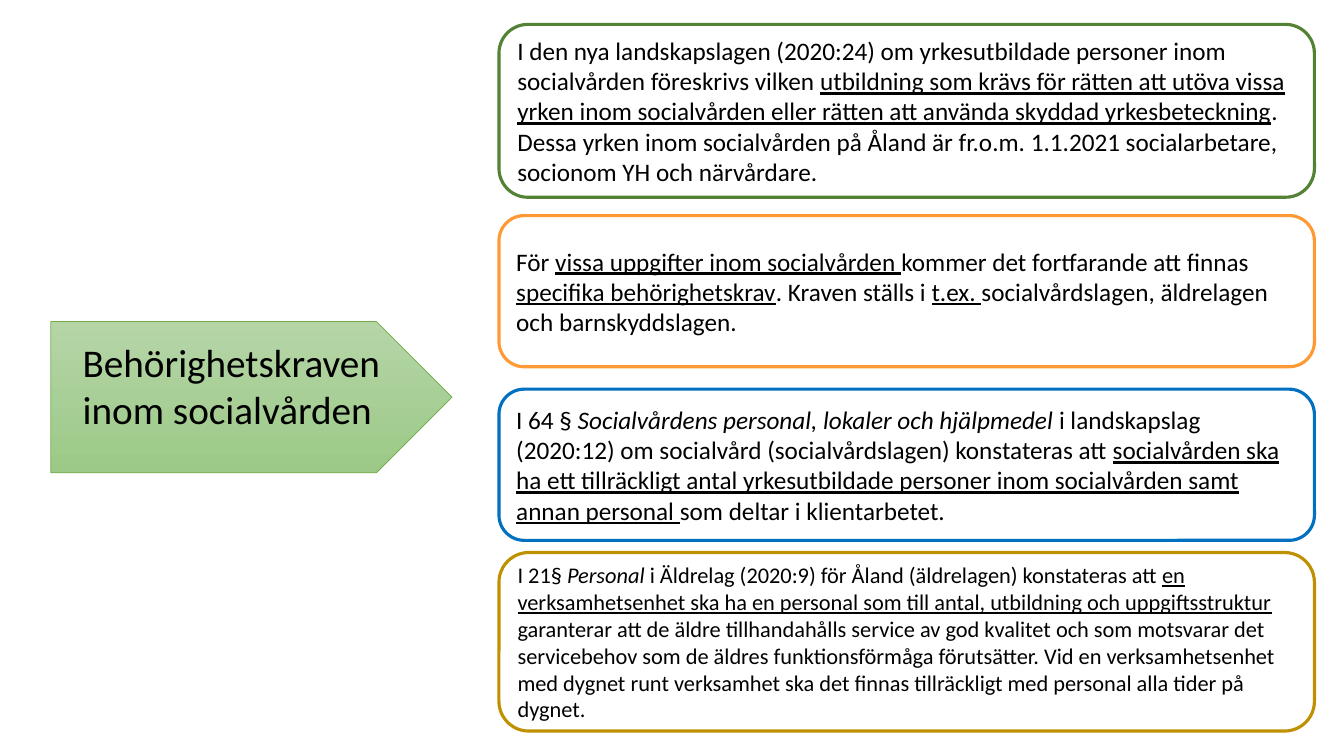
from pptx import Presentation
from pptx.dml.color import RGBColor
from pptx.enum.shapes import MSO_SHAPE
from pptx.enum.text import MSO_ANCHOR, MSO_AUTO_SIZE, PP_ALIGN
from pptx.util import Pt

BLACK = RGBColor(0x00, 0x00, 0x00)
WHITE = RGBColor(0xFF, 0xFF, 0xFF)
LIGHT_GREEN = RGBColor(0xB5, 0xD5, 0xA7)
MID_GREEN = RGBColor(0x9C, 0xC9, 0x87)
EDGE_GREEN = RGBColor(0x70, 0xAD, 0x47)
DARK_GREEN = RGBColor(0x54, 0x82, 0x35)
ORANGE = RGBColor(0xFF, 0x99, 0x33)
BLUE = RGBColor(0x00, 0x70, 0xC0)
GOLD = RGBColor(0xBF, 0x90, 0x00)

PLAIN, UNDERLINED, ITALIC = "plain", "underlined", "italic"


def style_font(font, size):
    font.name = "Calibri"
    font.size = Pt(size)
    font.color.rgb = BLACK


deck = Presentation()
deck.slide_width, deck.slide_height = Pt(960), Pt(540)
page = deck.slides.add_slide(deck.slide_layouts[6])

# Green arrow
arrow = page.shapes.add_shape(MSO_SHAPE.PENTAGON, Pt(36.3), Pt(229.7), Pt(286.6), Pt(108))
arrow.shadow.inherit = False
arrow.fill.gradient()
arrow.fill.gradient_angle = 270
for stop, color, position in zip(arrow.fill.gradient_stops, (LIGHT_GREEN, MID_GREEN), (0, 1)):
    stop.color.rgb = color
    stop.position = position
arrow.line.color.rgb = EDGE_GREEN
arrow.line.width = Pt(0.5)

# Heading on the arrow
heading = page.shapes.add_textbox(Pt(52), Pt(238.3), Pt(235.4), Pt(75))
heading.text_frame.word_wrap = False
heading.text_frame.auto_size = MSO_AUTO_SIZE.SHAPE_TO_FIT_TEXT
heading.text_frame.text = "Behörighetskraven\ninom socialvården"
for para in heading.text_frame.paragraphs:
    style_font(para.runs[0].font, 28)

# Text boxes: top, height, outline, text size, spans
boxes = [
    (17.4, 123.5, DARK_GREEN, 18, [
        ("I den nya landskapslagen (2020:24) om yrkesutbildade personer inom "
         "socialvården föreskrivs vilken ", PLAIN),
        ("utbildning som krävs för rätten att utöva vissa yrken inom socialvården "
         "eller rätten att använda skyddad yrkesbeteckning", UNDERLINED),
        (". Dessa yrken inom socialvården på Åland är fr.o.m. 1.1.2021 "
         "socialarbetare, socionom YH och närvårdare.", PLAIN),
    ]),
    (154, 108, ORANGE, 18, [
        ("För ", PLAIN),
        ("vissa uppgifter inom socialvården ", UNDERLINED),
        ("kommer det fortfarande att finnas ", PLAIN),
        ("specifika behörighetskrav", UNDERLINED),
        (". Kraven ställs i ", PLAIN),
        ("t.ex. ", UNDERLINED),
        ("socialvårdslagen, äldrelagen och barnskyddslagen.", PLAIN),
    ]),
    (278, 108, BLUE, 18, [
        ("I 64 §", PLAIN),
        (" Socialvårdens personal, lokaler och hjälpmedel", ITALIC),
        (" i landskapslag (2020:12) om socialvård (socialvårdslagen) "
         "konstateras att ", PLAIN),
        ("socialvården ska ha ett tillräckligt antal yrkesutbildade personer inom "
         "socialvården samt annan personal ", UNDERLINED),
        ("som deltar i klientarbetet.", PLAIN),
    ]),
    (394.7, 127.5, GOLD, 16, [
        ("I 21§ ", PLAIN),
        ("Personal", ITALIC),
        (" i Äldrelag (2020:9) för Åland (äldrelagen) konstateras att ", PLAIN),
        ("en verksamhetsenhet ska ha en personal som till antal, utbildning och "
         "uppgiftsstruktur ", UNDERLINED),
        ("garanterar att de äldre tillhandahålls service av god kvalitet och som "
         "motsvarar det servicebehov som de äldres funktionsförmåga förutsätter. "
         "Vid en verksamhetsenhet med dygnet runt verksamhet ska det finnas "
         "tillräckligt med personal alla tider på dygnet.", PLAIN),
    ]),
]
for top, height, outline, size, spans in boxes:
    box = page.shapes.add_shape(MSO_SHAPE.ROUNDED_RECTANGLE, Pt(356.4), Pt(top), Pt(582.5), Pt(height))
    box.shadow.inherit = False
    box.fill.solid()
    box.fill.fore_color.rgb = WHITE
    box.line.color.rgb = outline
    box.line.width = Pt(2.25)
    box.text_frame.word_wrap = True
    box.text_frame.vertical_anchor = MSO_ANCHOR.MIDDLE
    para = box.text_frame.paragraphs[0]
    para.alignment = PP_ALIGN.LEFT
    for text, style in spans:
        span = para.add_run()
        span.text = text
        style_font(span.font, size)
        span.font.underline = style == UNDERLINED
        span.font.italic = style == ITALIC

deck.save("out.pptx")
